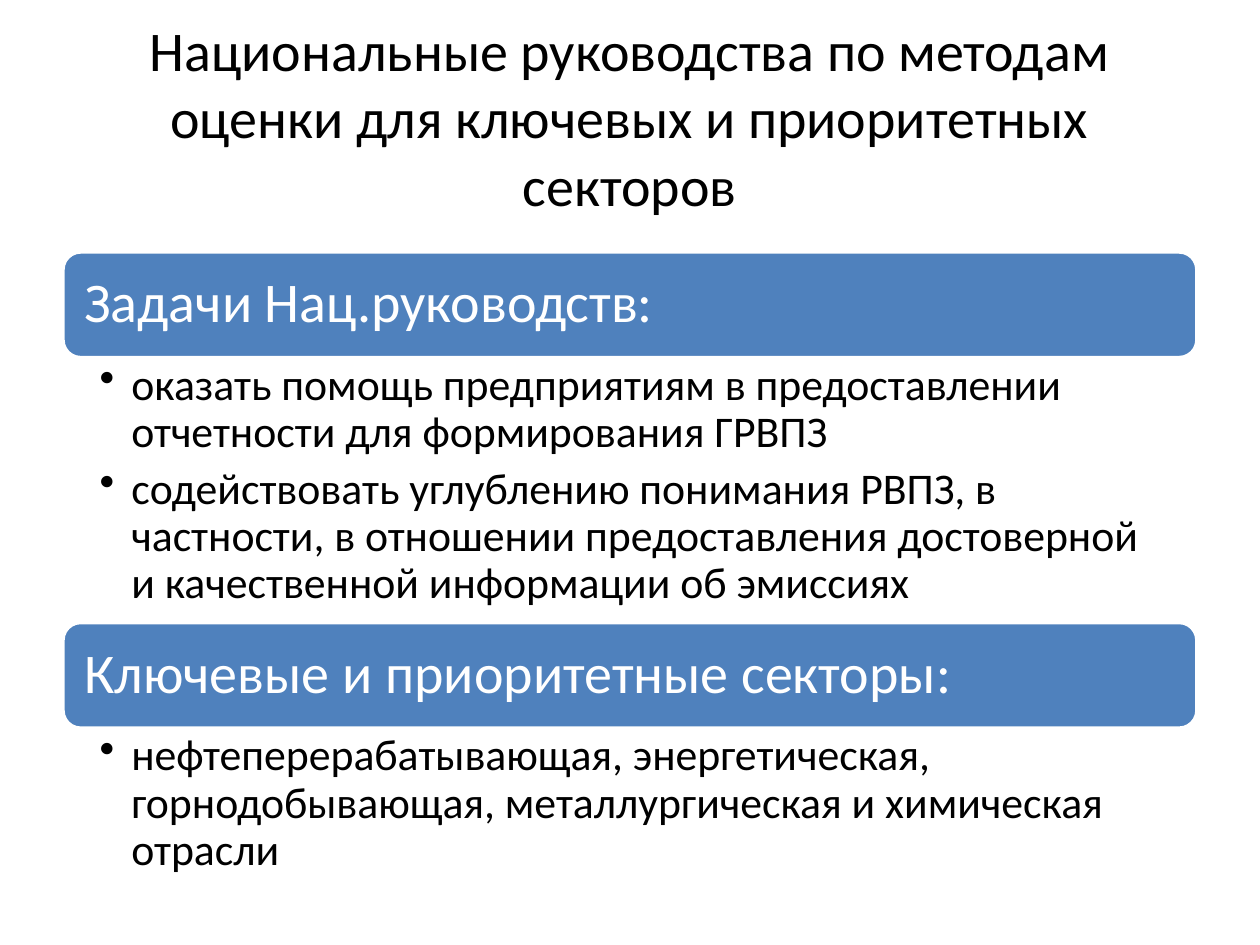
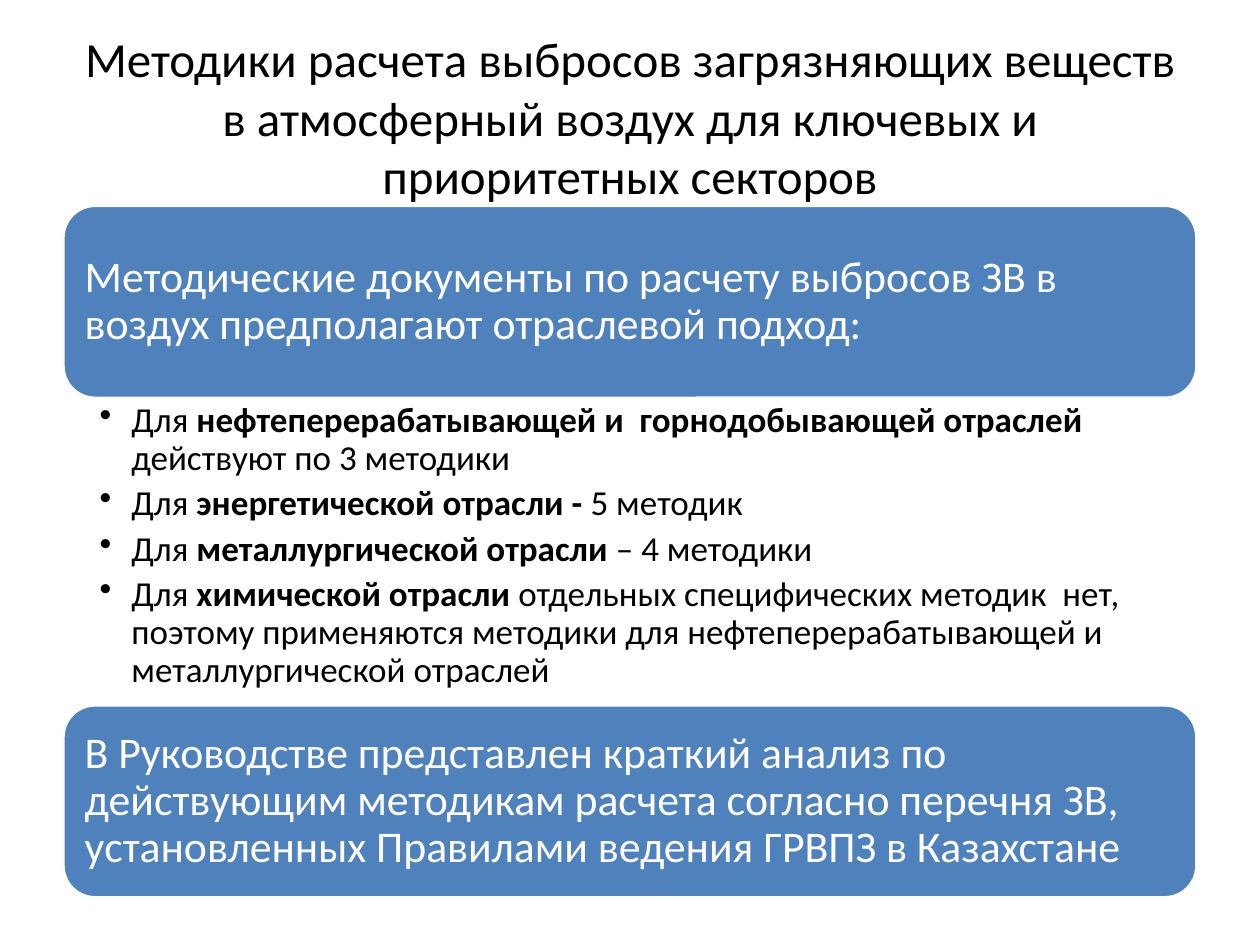
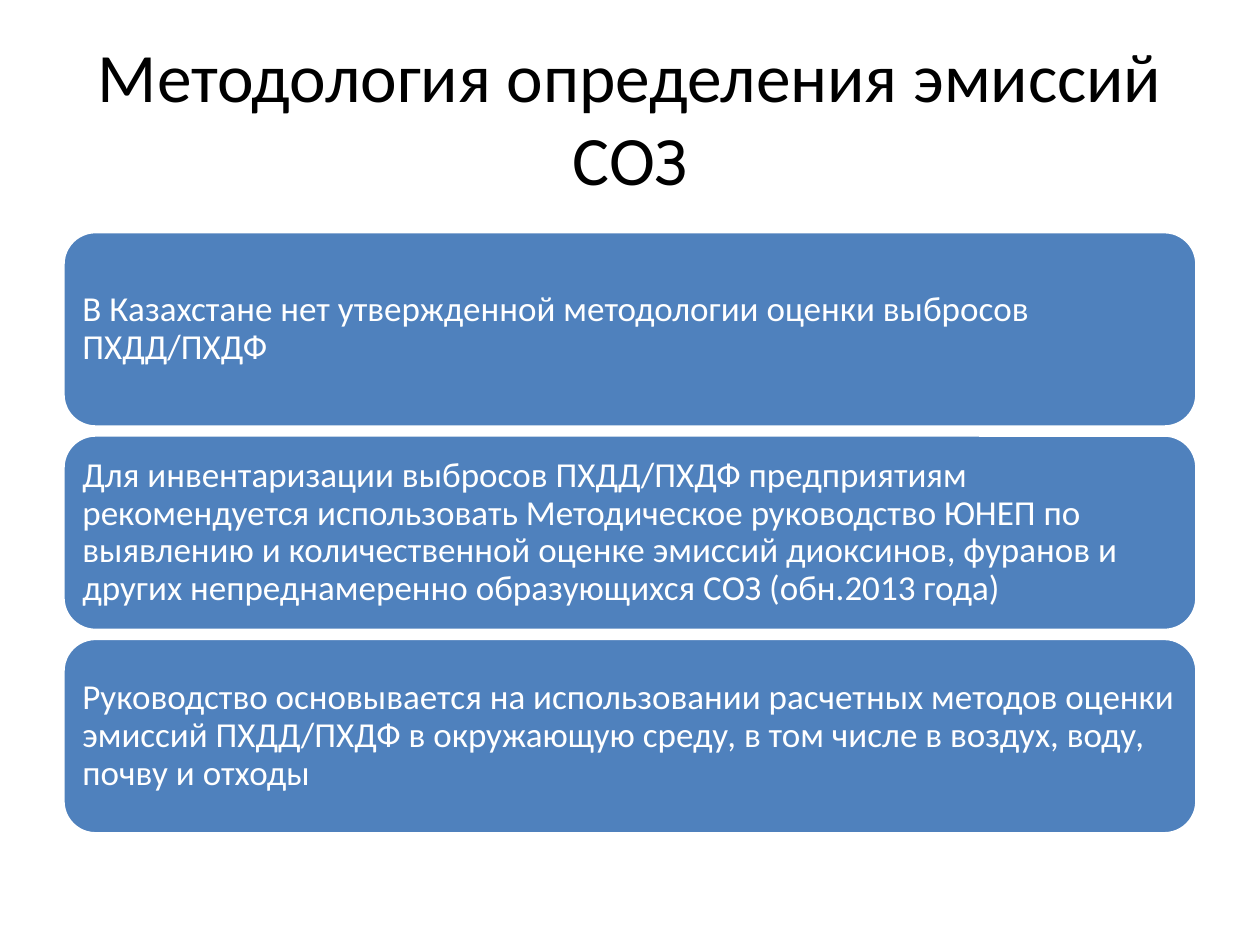
import pptx
import pptx.dml.color
import pptx.enum.shapes
import pptx.enum.text
import pptx.util
from lxml import etree
from pptx.util import Cm

FONT = "Calibri"
BLUE, WHITE, BLACK = "4F81BD", "FFFFFF", "000000"
LEFT, WIDTH = 1.27, 22.86
TITLE_TOP, TITLE_HEIGHT = 0.76, 3.18
BULLET_INDENT = 0.64
ALIGN = pptx.enum.text.PP_ALIGN
ANCHOR = pptx.enum.text.MSO_ANCHOR

# A block is (height in cm, text); a string is a blue band, a list is bullets.
# Asterisks enclose the bold words of a bullet.
SLIDES = [
    {
        "title": "Национальные руководства по методам оценки для ключевых и приоритетных секторов",
        "title_size": 32, "top": 5.08, "gap": 0,
        "band_size": 32, "band_inset": 0.33,
        "bullet_size": 25, "bullet_insets": (0.74, 0.1, 0.64, 0.1),
        "blocks": [
            (2.13, "Задачи Нац.руководств:"),
            (5.34, [
                "оказать помощь предприятиям в предоставлении отчетности для формирования ГРВПЗ",
                "содействовать углублению понимания РВПЗ, в частности, в отношении "
                "предоставления достоверной и качественной информации об эмиссиях",
            ]),
            (2.13, "Ключевые и приоритетные секторы:"),
            (3.23, [
                "нефтеперерабатывающая, энергетическая, горнодобывающая, "
                "металлургическая и химическая отрасли",
            ]),
        ],
    },
    {
        "title": "Методики расчета выбросов загрязняющих веществ в атмосферный воздух "
                 "для ключевых и приоритетных секторов",
        "title_size": 28, "top": 4.14, "gap": 0,
        "band_size": 25, "band_inset": 0.25,
        "bullet_size": 20, "bullet_insets": (0.74, 0.08, 0.48, 0.08),
        "blocks": [
            (3.89, "Методические документы по расчету выбросов ЗВ в воздух "
                   "предполагают отраслевой подход:"),
            (6.18, [
                "Для *нефтеперерабатывающей и  горнодобывающей отраслей* действуют по 3 методики",
                "Для *энергетической отрасли -* 5 методик",
                "Для *металлургической отрасли* – 4 методики",
                "Для *химической отрасли *отдельных специфических методик  нет, поэтому применяются "
                "методики для нефтеперерабатывающей и металлургической отраслей",
            ]),
            (3.89, "В Руководстве представлен краткий анализ по действующим методикам расчета "
                   "согласно перечня ЗВ, установленных Правилами ведения ГРВПЗ в Казахстане"),
        ],
    },
    {
        "title": "Методология определения эмиссий СОЗ",
        "title_size": 39.6, "top": 4.67, "gap": 0.16,
        "band_size": 20, "band_inset": 0.2,
        "blocks": [
            (3.94, "В Казахстане нет утвержденной методологии оценки выбросов ПХДД/ПХДФ"),
            (3.94, "Для инвентаризации выбросов ПХДД/ПХДФ предприятиям рекомендуется использовать "
                   "Методическое руководство ЮНЕП по выявлению и количественной оценке эмиссий "
                   "диоксинов, фуранов и других непреднамеренно образующихся СОЗ (обн.2013 года)"),
            (3.94, "Руководство основывается на использовании расчетных методов оценки эмиссий "
                   "ПХДД/ПХДФ в окружающую среду, в том числе в воздух, воду, почву и отходы"),
        ],
    },
]


def rgb(value):
    return pptx.dml.color.RGBColor.from_string(value)


def write(shape, texts, size, color, insets, anchor, align=ALIGN.LEFT, spacing=0.9):
    """Fill a shape with one paragraph per text and return the paragraphs."""
    frame = shape.text_frame
    frame.word_wrap = True
    frame.vertical_anchor = anchor
    for side, inset in zip(("left", "top", "right", "bottom"), insets):
        setattr(frame, f"margin_{side}", Cm(inset))
    for number, text in enumerate(texts):
        paragraph = frame.add_paragraph() if number else frame.paragraphs[0]
        paragraph.alignment = align
        paragraph.line_spacing = spacing
        for part, words in enumerate(text.split("*")):
            run = paragraph.add_run()
            run.text = words
            run.font.color.rgb = rgb(color)
            style = {"name": FONT, "size": pptx.util.Pt(size), "bold": part % 2 == 1}
            for key, value in style.items():
                setattr(run.font, key, value)
    return frame.paragraphs


deck = pptx.Presentation()
deck.slide_width, deck.slide_height = Cm(25.4), Cm(19.05)

for content in SLIDES:
    slide = deck.slides.add_slide(deck.slide_layouts[6])
    title = slide.shapes.add_textbox(Cm(LEFT), Cm(TITLE_TOP), Cm(WIDTH), Cm(TITLE_HEIGHT))
    write(title, [content["title"]], content["title_size"], BLACK,
          (0.25, 0.13, 0.25, 0.13), ANCHOR.MIDDLE, ALIGN.CENTER, 1.0)

    top = content["top"]
    for height, text in content["blocks"]:
        place = Cm(LEFT), Cm(top), Cm(WIDTH), Cm(height)
        if isinstance(text, str):
            band = slide.shapes.add_shape(
                pptx.enum.shapes.MSO_SHAPE.ROUNDED_RECTANGLE, *place)
            band.shadow.inherit = False
            band.fill.solid()
            band.fill.fore_color.rgb = rgb(BLUE)
            band.line.color.rgb = rgb(WHITE)
            band.line.width = pptx.util.Pt(2)
            write(band, [text], content["band_size"], WHITE,
                  [content["band_inset"]] * 4, ANCHOR.MIDDLE)
        else:
            size = content["bullet_size"]
            bullets = slide.shapes.add_textbox(*place)
            for paragraph in write(bullets, text, size, BLACK,
                                   content["bullet_insets"], ANCHOR.TOP):
                paragraph.level = 1
                paragraph.space_after = pptx.util.Pt(0.22 * size)
                properties = paragraph._p.get_or_add_pPr()
                properties.set("marL", str(Cm(BULLET_INDENT)))
                properties.set("indent", str(-Cm(BULLET_INDENT)))
                mark = etree.SubElement(properties, pptx.oxml.ns.qn("a:buChar"))
                mark.set("char", "•")
        top += height + content["gap"]

deck.save("out.pptx")
